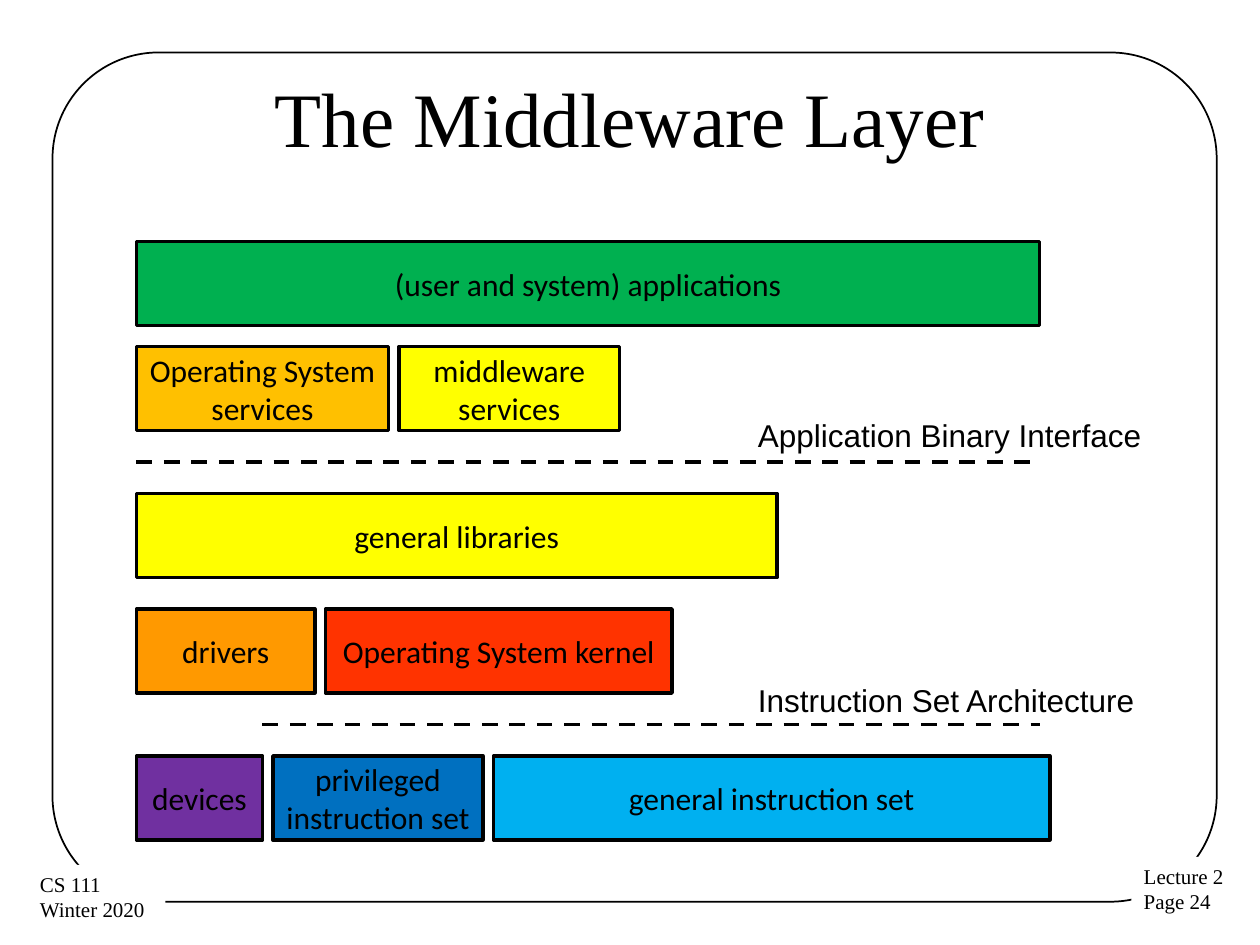
from pptx import Presentation
from pptx.dml.color import RGBColor
from pptx.enum.dml import MSO_LINE
from pptx.enum.shapes import MSO_CONNECTOR, MSO_SHAPE
from pptx.enum.text import MSO_ANCHOR, PP_ALIGN
from pptx.oxml.ns import qn
from pptx.util import Emu, Pt
from lxml import etree

RECTANGLE = MSO_SHAPE.RECTANGLE
ROUNDED = MSO_SHAPE.ROUNDED_RECTANGLE
STRAIGHT = MSO_CONNECTOR.STRAIGHT
DASH = MSO_LINE.DASH
LEFT, CENTER = PP_ALIGN.LEFT, PP_ALIGN.CENTER
TOP, MIDDLE = MSO_ANCHOR.TOP, MSO_ANCHOR.MIDDLE

BLACK = RGBColor(0x00, 0x00, 0x00)
WHITE = RGBColor(0xFF, 0xFF, 0xFF)
GREEN = RGBColor(0x00, 0xB0, 0x50)
AMBER = RGBColor(0xFF, 0xC0, 0x00)
YELLOW = RGBColor(0xFF, 0xFF, 0x00)
ORANGE = RGBColor(0xFF, 0x99, 0x00)
RED = RGBColor(0xFF, 0x33, 0x00)
PURPLE = RGBColor(0x70, 0x30, 0xA0)
BLUE = RGBColor(0x00, 0x70, 0xC0)
SKY = RGBColor(0x00, 0xB0, 0xF0)

EMU_PER_PX = 9525
STACK_LEFT, STACK_RIGHT = 104, 792
LAYER_HEIGHT = 64
BLOCK_GAP = 8

# Each layer: top, then its blocks from left to right (label, width, fill)
LAYERS = [
    (184, [("(user and system) applications", 688, GREEN)]),
    (264, [("Operating System services", 192, AMBER),
           ("middleware services", 168, YELLOW)]),
    (376, [("general libraries", 488, YELLOW)]),
    (464, [("drivers", 136, ORANGE),
           ("Operating System kernel", 264, RED)]),
    (576, [("devices", 96, PURPLE),
           ("privileged instruction set", 160, BLUE),
           ("general instruction set", 424, SKY)]),
]

# Each interface: name, top of its name, start and height of its line
INTERFACES = [
    ("Application Binary Interface", 312, STACK_LEFT, 352),
    ("Instruction Set Architecture", 514, 200, 552),
]

FOOTERS = [
    (("Lecture 2", "Page 24"), 862, 653, 82),
    (("CS 111", "Winter 2020"), 21, 659, 105),
]


def px(*lengths):
    return [Emu(length * EMU_PER_PX) for length in lengths]


def write(shape, *lines, font="Calibri", size=18, align=LEFT, anchor=TOP, wrap=True):
    frame = shape.text_frame
    frame.word_wrap = wrap
    frame.vertical_anchor = anchor
    for index, line in enumerate(lines):
        paragraph = frame.add_paragraph() if index else frame.paragraphs[0]
        paragraph.alignment = align
        run = paragraph.add_run()
        run.text = line
        run.font.name = font
        run.font.size = Pt(size)
        run.font.color.rgb = BLACK


class SlideBuilder:
    serif = "Times New Roman"
    sans = "Arial"

    def __init__(self, slide):
        self.shapes = slide.shapes

    def shape(self, kind, box, fill=None, line_width=None):
        shape = self.shapes.add_shape(kind, *px(*box))
        shape.shadow.inherit = False
        if fill is None:
            shape.fill.background()
        else:
            shape.fill.solid()
            shape.fill.fore_color.rgb = fill
        if line_width is None:
            shape.line.fill.background()
        else:
            shape.line.color.rgb = BLACK
            shape.line.width = Pt(line_width)
        return shape

    def frame(self, box):
        outline = self.shape(ROUNDED, box, line_width=1)
        outline.adjustments[0] = 0.125

    def title(self, text, box):
        write(self.shapes.add_textbox(*px(*box)), text,
              font=self.serif, size=44, align=CENTER, anchor=MIDDLE)

    def footer(self, lines, box):
        """Lay a white patch over the frame and write on it."""
        write(self.shape(RECTANGLE, box, fill=WHITE), *lines,
              font=self.serif, size=12, wrap=False)

    def block(self, label, box, fill):
        write(self.shape(RECTANGLE, box, fill, line_width=2), label,
              align=CENTER, anchor=MIDDLE)

    def interface_name(self, text, box):
        write(self.shapes.add_textbox(*px(*box)), text, font=self.sans)

    def dashed_line(self, start, end, y):
        line = self.shapes.add_connector(STRAIGHT, *px(start, y, end, y))
        line.line.color.rgb = BLACK
        line.line.width = Pt(2.25)
        line.line.dash_style = DASH
        etree.SubElement(line._element.spPr, qn("a:effectLst"))


def main():
    deck = Presentation()
    deck.slide_width, deck.slide_height = px(960, 720)
    builder = SlideBuilder(deck.slides.add_slide(deck.slide_layouts[6]))

    builder.frame((40, 40, 887, 647))
    for lines, left, top, width in FOOTERS:
        builder.footer(lines, (left, top, width, 49))
    builder.title("The Middleware Layer", (48, 29, 864, 120))

    for top, blocks in LAYERS:
        left = STACK_LEFT
        for label, width, fill in blocks:
            builder.block(label, (left, top, width, LAYER_HEIGHT), fill)
            left += width + BLOCK_GAP

    for name, name_top, line_start, line_y in INTERFACES:
        builder.dashed_line(line_start, STACK_RIGHT, line_y)
        builder.interface_name(name, (568, name_top, 312, 38))

    deck.save("out.pptx")


if __name__ == "__main__":
    main()
